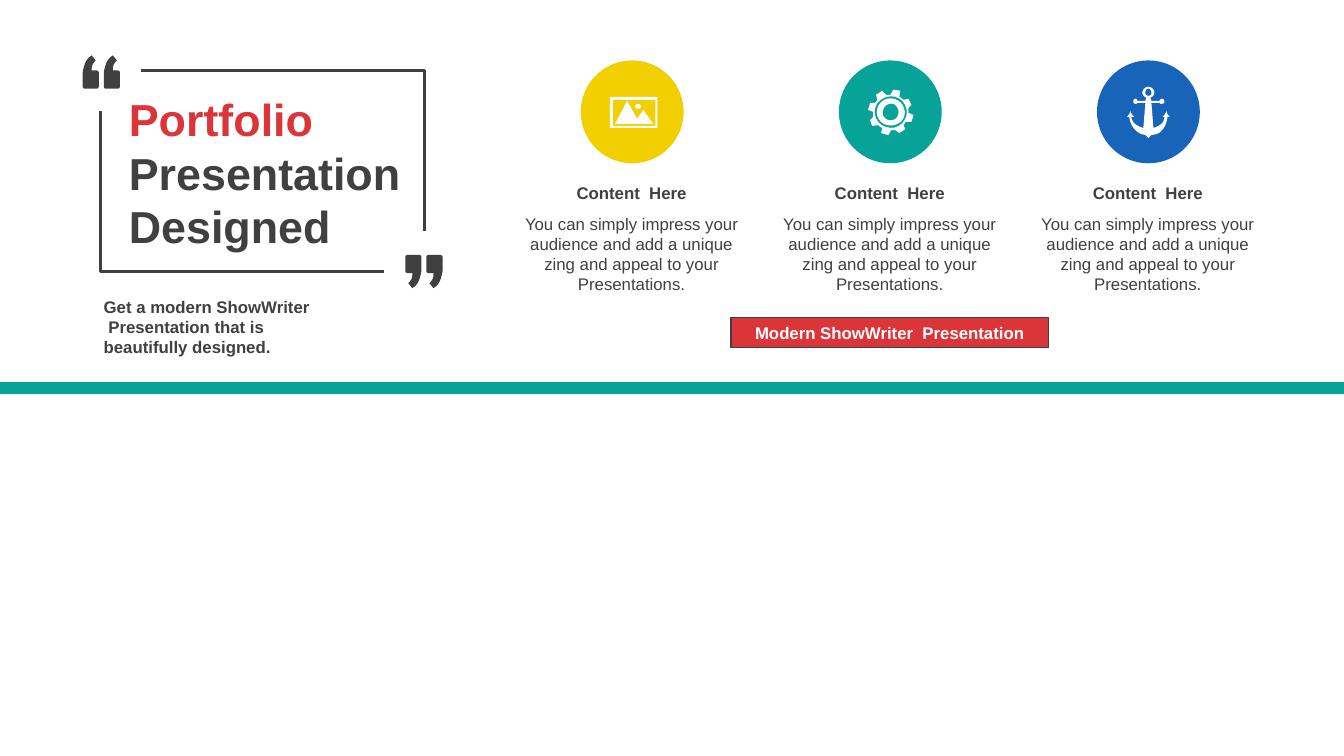
from pptx import Presentation
from pptx.dml.color import RGBColor
from pptx.enum.shapes import MSO_SHAPE as Shape
from pptx.enum.text import MSO_ANCHOR as Anchor, MSO_AUTO_SIZE as AutoSize, PP_ALIGN as Align
from pptx.util import Inches, Pt

COLORS = {name: RGBColor.from_string(value) for name, value in {
    "dark": "404040", "red": "DC3539", "yellow": "F1CF01",
    "teal": "07A398", "blue": "1764B9", "white": "FFFFFF",
}.items()}

QUOTE = """M 0.84,0.88 L 0.96,0.88 C 0.97,0.88 0.98,0.87 0.98,0.86 L 0.98,0.72
    C 0.98,0.71 0.97,0.7 0.96,0.7 L 0.91,0.7 C 0.91,0.66 0.91,0.64 0.95,0.6 L 0.91,0.55
    C 0.84,0.59 0.83,0.67 0.82,0.72 L 0.82,0.86 C 0.82,0.87 0.83,0.88 0.84,0.88"""
FRAME_CORNER = "M 1.4,0.7 L 4.21,0.7 4.21,2.29"

PHOTO = """M 6.33,1.03 C 6.34,1.03 6.36,1.04 6.36,1.06 6.36,1.07 6.34,1.08 6.33,1.08
    6.31,1.08 6.3,1.07 6.3,1.06 6.3,1.04 6.31,1.03 6.33,1.03
    M 6.22,1 L 6.32,1.18 6.38,1.09 6.48,1.23 6.1,1.23
    M 6.08,0.99 L 6.08,1.25 6.5,1.25 6.5,0.99
    M 6.05,0.96 L 6.52,0.96 6.52,1.27 6.05,1.27"""
GEAR_RINGS = """M 8.86,1.03 C 8.81,1.02 8.77,1.05 8.76,1.09 8.74,1.13 8.77,1.18 8.81,1.19
    8.86,1.2 8.9,1.18 8.91,1.13 8.92,1.09 8.9,1.05 8.86,1.03
    M 8.87,0.98 C 8.94,1 8.99,1.07 8.97,1.15 8.95,1.22 8.87,1.26 8.8,1.24
    8.73,1.23 8.68,1.15 8.7,1.08 8.72,1 8.8,0.96 8.87,0.98
    M 8.88,0.96 C 8.79,0.94 8.7,0.99 8.68,1.07 8.66,1.16 8.71,1.24 8.79,1.26
    8.88,1.29 8.96,1.24 8.99,1.15 9.01,1.07 8.96,0.98 8.88,0.96"""
GEAR_TEETH = """M 8.93,0.9 L 8.92,0.96 C 8.94,0.97 8.95,0.98 8.96,0.99
    L 9.01,0.98 9.04,1.04 9.01,1.07 C 9.01,1.08 9.01,1.1 9.01,1.12
    L 9.06,1.14 9.04,1.21 8.98,1.21 C 8.98,1.22 8.97,1.23 8.96,1.24
    L 8.98,1.28 8.92,1.32 8.88,1.29 C 8.87,1.29 8.85,1.29 8.84,1.29
    L 8.81,1.34 8.74,1.32 8.75,1.27 C 8.73,1.26 8.72,1.25 8.71,1.24
    L 8.65,1.25 8.63,1.19 8.66,1.16 C 8.66,1.14 8.66,1.13 8.66,1.11
    L 8.61,1.09 8.63,1.02 8.68,1.02 C 8.69,1.01 8.7,1 8.7,0.99
    L 8.69,0.94 8.75,0.9 8.79,0.94 C 8.8,0.94 8.82,0.94 8.83,0.94 L 8.86,0.89"""
ANCHOR_EYE = """M 11.39,0.88 C 11.37,0.88 11.36,0.9 11.36,0.92 11.36,0.94 11.37,0.95 11.39,0.95
    11.41,0.95 11.42,0.94 11.42,0.92 11.42,0.9 11.41,0.88 11.39,0.88"""
ANCHOR_RIGHT = """M 11.39,0.86 C 11.42,0.86 11.45,0.89 11.45,0.92 11.45,0.94 11.43,0.96 11.41,0.97
    L 11.42,1 11.5,1 C 11.51,0.99 11.51,0.98 11.52,0.98 11.54,0.98 11.55,0.99 11.55,1.01
    11.55,1.02 11.54,1.03 11.52,1.03 11.51,1.03 11.51,1.03 11.5,1.02
    L 11.42,1.02 11.44,1.27 C 11.5,1.25 11.55,1.22 11.55,1.16 L 11.53,1.16
    C 11.55,1.14 11.56,1.13 11.57,1.1 11.57,1.13 11.59,1.14 11.6,1.16 L 11.58,1.16
    C 11.57,1.25 11.52,1.34 11.42,1.34 11.4,1.36 11.4,1.36 11.39,1.37"""
ANCHOR_LEFT = """C 11.38,1.36 11.38,1.36 11.36,1.34 11.27,1.33 11.21,1.25 11.2,1.16 L 11.18,1.16
    C 11.19,1.14 11.21,1.13 11.21,1.1 11.22,1.13 11.23,1.14 11.25,1.16 L 11.22,1.16
    C 11.23,1.22 11.27,1.25 11.34,1.27 L 11.36,1.02 11.28,1.02
    C 11.28,1.03 11.27,1.03 11.26,1.03 11.25,1.03 11.24,1.02 11.24,1.01
    11.24,0.99 11.25,0.98 11.26,0.98 11.27,0.98 11.28,0.99 11.28,1
    L 11.36,1 11.37,0.97 C 11.35,0.96 11.33,0.94 11.33,0.92 11.33,0.89 11.36,0.86 11.39,0.86"""

CURVE_STEPS = 6

presentation = Presentation()
presentation.slide_width, presentation.slide_height = Inches(13.33), Inches(7.5)
slide = presentation.slides.add_slide(presentation.slide_layouts[6])


def add_outline(parts, shift=(0, 0), sign=1, closed=True):
    """Draw M, L and C commands in inches; a sign of -1 turns the outline by 180 degrees."""
    contours, controls, command = [], [], ""
    for token in [token for part in parts for token in part.split()]:
        if token in ("M", "L", "C"):
            command = token
            continue
        x, y = (Inches(offset + sign * float(number))
                for offset, number in zip(shift, token.split(",")))
        if command == "M":
            contours.append([(x, y)])
        elif command == "L":
            contours[-1].append((x, y))
        else:
            controls.append((x, y))
            if len(controls) == 3:
                curve = [contours[-1][-1], *controls]
                for step in range(1, CURVE_STEPS + 1):
                    t = step / CURVE_STEPS
                    weights = ((1 - t) ** 3, 3 * t * (1 - t) ** 2, 3 * t * t * (1 - t), t ** 3)
                    contours[-1].append(tuple(
                        sum(w * point[axis] for w, point in zip(weights, curve))
                        for axis in (0, 1)))
                controls = []
    builder = slide.shapes.build_freeform(*contours[0][0], scale=1.0)
    for index, contour in enumerate(contours):
        if index:
            builder.move_to(*contour[0])
        builder.add_line_segments(contour[1:], close=closed)
    shape = builder.convert_to_shape()
    shape.shadow.inherit = False
    return shape


def write_text(shape, lines, size=12, bold=True, color="dark", align=Align.LEFT):
    text_frame = shape.text_frame
    text_frame.word_wrap = True
    text_frame.auto_size = AutoSize.SHAPE_TO_FIT_TEXT
    text_frame.text = "\n".join(lines)
    for paragraph in text_frame.paragraphs:
        paragraph.alignment = align
        for run in paragraph.runs:
            run.font.name = "Arial"
            run.font.size = Pt(size)
            run.font.bold = bold
            run.font.color.rgb = COLORS[color]
    return text_frame


# Divider bar
bar = slide.shapes.add_shape(Shape.RECTANGLE, 0, Inches(3.79), Inches(13.33), Inches(0.12))
bar.shadow.inherit = False
bar.fill.solid()
bar.fill.fore_color.rgb = COLORS["teal"]
bar.line.fill.background()

# Framed title with quotation marks
title = slide.shapes.add_textbox(Inches(1.18), Inches(0.86), Inches(3.05), Inches(1.72))
title_frame = write_text(title, ["Portfolio", "Presentation Designed"], size=32)
title_frame.paragraphs[0].runs[0].font.color.rgb = COLORS["red"]

for shift, sign in (((0, 0), 1), ((0.21, 0), 1), ((5.21, 3.41), -1), ((5, 3.41), -1)):
    quote = add_outline([QUOTE], shift, sign)
    quote.fill.solid()
    quote.fill.fore_color.rgb = COLORS["dark"]
    quote.line.fill.background()

for shift, sign in (((0, 0), 1), ((5.21, 3.39), -1)):
    corner = add_outline([FRAME_CORNER], shift, sign, closed=False)
    corner.fill.background()
    corner.line.color.rgb = COLORS["dark"]
    corner.line.width = Pt(2)

subtitle = slide.shapes.add_textbox(Inches(0.93), Inches(2.89), Inches(2.28), Inches(0.71))
write_text(subtitle, ["Get a modern ShowWriter  Presentation that is beautifully designed."])

# Three content columns
for column, (color, icon_parts) in enumerate((
        ("yellow", [PHOTO]),
        ("teal", [GEAR_RINGS, GEAR_TEETH]),
        ("blue", [ANCHOR_EYE, ANCHOR_RIGHT, ANCHOR_LEFT]))):
    offset = 2.56 * column
    circle = slide.shapes.add_shape(
        Shape.OVAL, Inches(5.76 + offset), Inches(0.6), Inches(1.02), Inches(1.02))
    circle.shadow.inherit = False
    icon = add_outline(icon_parts)
    for shape, fill in ((circle, color), (icon, "white")):
        shape.fill.solid()
        shape.fill.fore_color.rgb = COLORS[fill]
        shape.line.fill.background()

    left = Inches(5.03 + offset)
    heading = slide.shapes.add_textbox(left, Inches(1.76), Inches(2.47), Inches(0.3))
    write_text(heading, ["Content  Here"], align=Align.CENTER)
    body = slide.shapes.add_textbox(left, Inches(2.07), Inches(2.47), Inches(0.91))
    write_text(body, ["You can simply impress your audience and add a unique zing "
                      "and appeal to your Presentations."], bold=False, align=Align.CENTER)

# Banner
banner = slide.shapes.add_shape(
    Shape.RECTANGLE, Inches(7.25), Inches(3.15), Inches(3.15), Inches(0.3))
banner.shadow.inherit = False
banner.fill.solid()
banner.fill.fore_color.rgb = COLORS["red"]
banner.line.color.rgb = COLORS["dark"]
banner.line.width = Pt(1)
banner_frame = write_text(banner, ["Modern ShowWriter  Presentation"],
                          color="white", align=Align.CENTER)
banner_frame.vertical_anchor = Anchor.MIDDLE

presentation.save("out.pptx")
